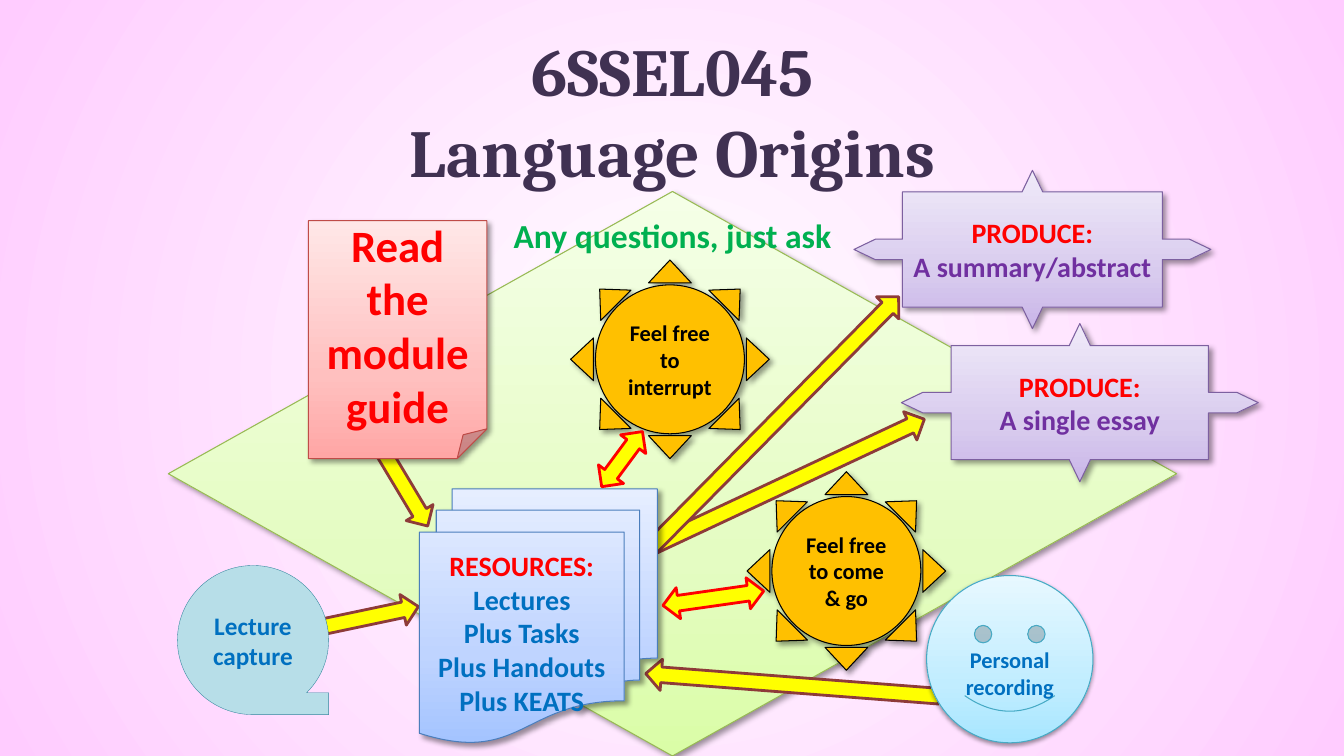
from lxml.etree import SubElement
from pptx import Presentation
from pptx.dml.color import RGBColor
from pptx.enum.shapes import MSO_SHAPE
from pptx.enum.text import MSO_ANCHOR, PP_ALIGN
from pptx.oxml.ns import qn
from pptx.util import Inches, Pt

RED, BLUE, PURPLE = "FF0000", "0070C0", "7030A0"
GREEN_FADE = ("DAFDA7", "E4FCC2", "F5FFE7")
BLUE_FADE = ("A4C4FF", "BFD4FF", "E6EEFF")
RED_FADE = ("FFA6A5", "FFC0BF", "FFE7E7")
PURPLE_FADE = ("C9B5E8", "D8CBEE", "F0EAF9")
AQUA_FADE = ("A7E6FF", "C1EDFF", "E7F8FF")
SOFT_SHADOW = (40, 4, 3, 45)  # opacity %, blur pt, distance pt, angle
LOW_SHADOW = (38, 3.1, 1.6, 90)


def color(hex_code):
    return RGBColor.from_string(hex_code)


def add_xml(parent, tag, **attributes):
    return SubElement(parent, qn(tag), {k: str(v) for k, v in attributes.items()})


def set_gradient(owner, fill, stops, radial=False):
    """Fade through (percent, colour) stops, upwards or from the centre."""
    fill.gradient()
    gradient = owner.element.xpath(".//a:gradFill")[0]
    for child in list(gradient):
        gradient.remove(child)
    stop_list = add_xml(gradient, "a:gsLst")
    for percent, hex_code in stops:
        stop = add_xml(stop_list, "a:gs", pos=percent * 1000)
        add_xml(stop, "a:srgbClr", val=hex_code)
    if radial:
        circle = add_xml(gradient, "a:path", path="circle")
        add_xml(circle, "a:fillToRect", l=50000, t=50000, r=50000, b=50000)
    else:
        add_xml(gradient, "a:lin", ang=270 * 60000, scaled=0)


def set_shadow(shape, opacity, blur, distance, angle):
    effects = shape.element.spPr.find(qn("a:effectLst"))
    shadow = add_xml(effects, "a:outerShdw", blurRad=Pt(blur), dist=Pt(distance),
                     dir=angle * 60000, algn="tl", rotWithShape=0)
    black = add_xml(shadow, "a:srgbClr", val="000000")
    add_xml(black, "a:alpha", val=opacity * 1000)


def write(shape, lines, size, colors, font="Calibri", top=0.05):
    """Centre bold lines; the last colour serves all remaining lines."""
    frame = shape.text_frame
    frame.word_wrap = True
    frame.vertical_anchor = MSO_ANCHOR.MIDDLE
    frame.margin_top = Inches(top)
    for index, line in enumerate(lines):
        paragraph = frame.paragraphs[0] if index == 0 else frame.add_paragraph()
        paragraph.alignment = PP_ALIGN.CENTER
        paragraph.text = line
        for run in paragraph.runs:
            run.font.name, run.font.size, run.font.bold = font, Pt(size), True
            run.font.color.rgb = color(colors[min(index, len(colors) - 1)])


def add_figure(slide, kind, box, fill, line, width=0.75, shadow=None, adjust=()):
    shape = slide.shapes.add_shape(kind, *map(Inches, box))
    shape.shadow.inherit = False
    for index, value in enumerate(adjust):
        shape.adjustments[index] = value
    if isinstance(fill, str):
        shape.fill.solid()
        shape.fill.fore_color.rgb = color(fill)
    else:
        set_gradient(shape, shape.fill, zip((0, 35, 100), fill))
    shape.line.color.rgb = color(line)
    shape.line.width = Pt(width)
    if shadow:
        set_shadow(shape, *shadow)
    return shape


def add_label(slide, box, lines, **text_format):
    write(slide.shapes.add_textbox(*map(Inches, box)), lines, **text_format)


def add_backdrop(slide, box):
    left, top, width, height = box
    add_figure(slide, MSO_SHAPE.FLOWCHART_DECISION, box, GREEN_FADE, "98B955",
               shadow=SOFT_SHADOW)
    add_label(slide, (left + width / 2 - 2, top + 0.18, 4, 0.5),
              ["Any questions, just ask"], size=24, colors=["00B050"])


def add_arrow(slide, left, top, length, rotation, two_way=False):
    kind = MSO_SHAPE.LEFT_RIGHT_ARROW if two_way else MSO_SHAPE.RIGHT_ARROW
    arrow = add_figure(slide, kind, (left, top, length, 0.31), "FFFF00",
                       RED if two_way else "8E3B39", width=2)
    arrow.rotation = rotation


def add_sun(slide, left, top, message):
    sun = add_figure(slide, MSO_SHAPE.SUN, (left, top, 1.97, 1.97), "FFC000", "000000",
                     shadow=SOFT_SHADOW, adjust=[0.125])
    write(sun, [message], size=16, colors=["000000"])


def add_task(slide, left, top, product, body):
    task = add_figure(slide, MSO_SHAPE.QUAD_ARROW_CALLOUT, (left, top, 3.54, 1.57),
                      PURPLE_FADE, "7D60A0", shadow=SOFT_SHADOW,
                      adjust=[0.129, 0.065, 0.136, body])
    write(task, ["PRODUCE:", product], size=20, colors=[RED, PURPLE])


def add_resources(slide, box):
    resources = add_figure(slide, MSO_SHAPE.FLOWCHART_MULTIDOCUMENT, box, BLUE_FADE,
                           "4B7EBC", shadow=SOFT_SHADOW)
    write(resources, ["RESOURCES:", "Lectures", "Plus Tasks", "Plus Handouts",
                      "Plus KEATS"], size=20, colors=[RED, BLUE])


def add_guide(slide, box):
    guide = add_figure(slide, MSO_SHAPE.FOLDED_CORNER, box, RED_FADE, "BF4C48",
                       shadow=SOFT_SHADOW)
    write(guide, ["Read the module guide"], size=32, colors=[RED])


def add_recordings(slide, capture_box, personal_box):
    capture = add_figure(slide, MSO_SHAPE.FLOWCHART_SEQUENTIAL_ACCESS_STORAGE,
                         capture_box, "B7DEE8", "31859C", width=0.25)
    write(capture, ["Lecture capture"], size=18, colors=[BLUE])
    personal = add_figure(slide, MSO_SHAPE.SMILEY_FACE, personal_box, AQUA_FADE,
                          "46AAC5", shadow=LOW_SHADOW)
    write(personal, ["Personal recording"], size=16, colors=[BLUE], top=0.32)


def main():
    deck = Presentation()
    deck.slide_width, deck.slide_height = Inches(13.33), Inches(7.5)
    slide = deck.slides.add_slide(deck.slide_layouts[6])
    set_gradient(slide, slide.background.fill, [(0, "FFFFFF"), (100, "FFCCFF")],
                 radial=True)

    add_backdrop(slide, (1.67, 1.9, 10, 5.6))

    # Flow into and out of the resources
    for place in [(6.31, 4.64, 3, 334.9), (3.22, 5.96, 0.94, 348.1),
                  (5.73, 4.12, 3.74, 314.6), (3.53, 4.66, 0.94, 59.1),
                  (6.4, 6.64, 2.92, 184.4)]:
        add_arrow(slide, *place)

    # Title
    add_label(slide, (1.67, 0, 10, 2.18), ["6SSEL045\vLanguage Origins"],
              size=48, colors=["403152"], font="Cambria")

    # Module parts
    add_sun(slide, 5.66, 2.58, "Feel free to interrupt")
    add_resources(slide, (4.16, 4.85, 2.36, 2.52))
    add_sun(slide, 7.41, 4.68, "Feel free to come & go")
    add_guide(slide, (3.06, 2.19, 1.77, 2.36))
    add_task(slide, 8.47, 1.69, "A summary/abstract", 0.729)
    add_recordings(slide, (1.76, 5.61, 1.5, 1.48), (9.19, 5.71, 1.65, 1.66))

    # Two-way links between the suns and the resources
    add_arrow(slide, 5.83, 4.4, 0.68, 306.5, two_way=True)
    add_arrow(slide, 6.57, 5.78, 1.01, 351.9, two_way=True)

    add_task(slide, 8.94, 3.21, "A single essay", 0.721)
    deck.save("out.pptx")


if __name__ == "__main__":
    main()
